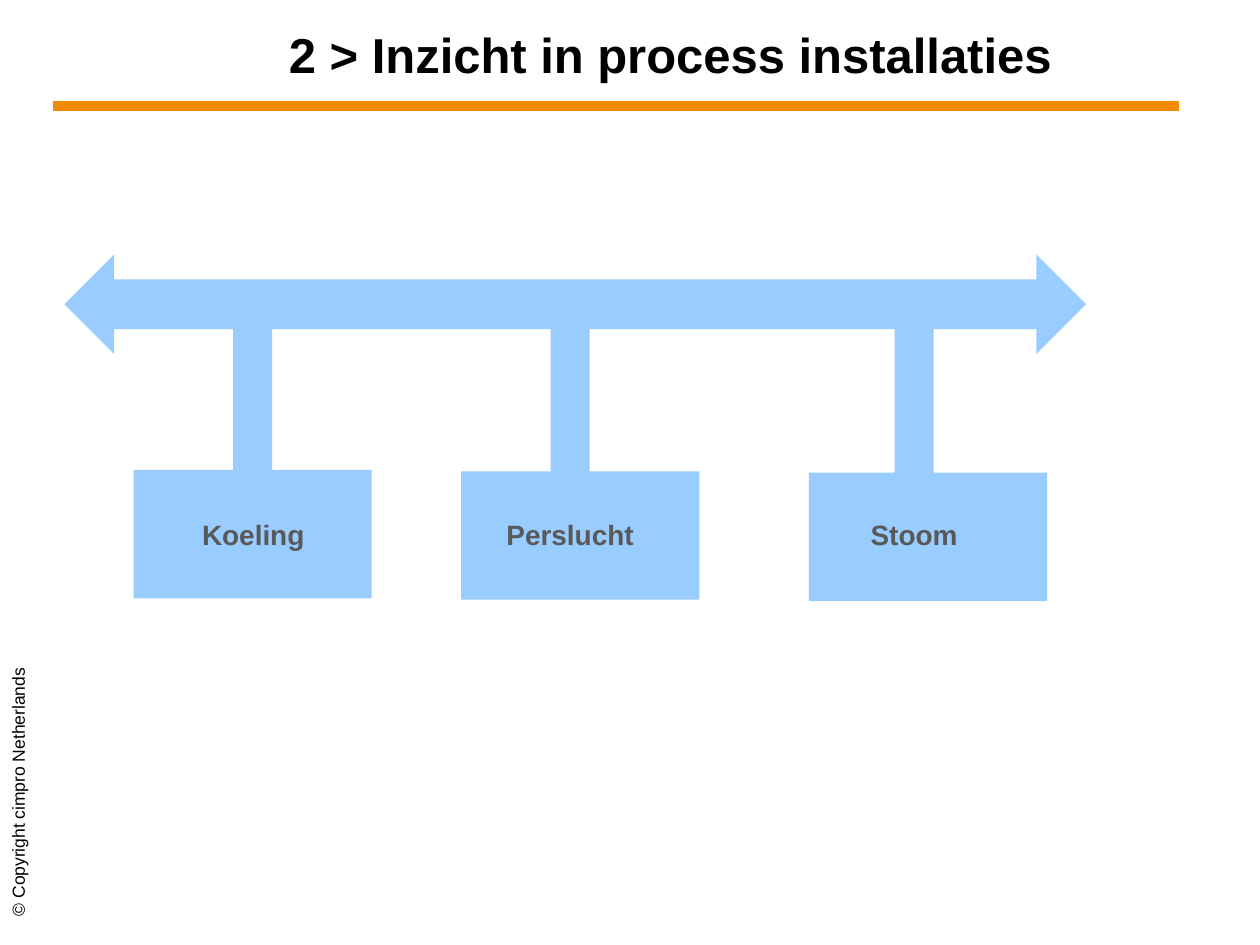
from lxml.etree import SubElement
from pptx import Presentation
from pptx.dml.color import RGBColor
from pptx.enum.shapes import MSO_CONNECTOR, MSO_SHAPE
from pptx.enum.text import MSO_ANCHOR, PP_ALIGN
from pptx.oxml.ns import qn
from pptx.util import Inches, Pt

TITLE = "2 > Inzicht in process installaties"
COPYRIGHT = "© Copyright cimpro Netherlands"
BLUE, ORANGE, GREY, BLACK = "99CCFF", "F28B00", "595959", "000000"

# name, box left, box top, pipe left, label left, label width
UTILITIES = [
    ("Koeling", 1.06, 3.73, 1.85, 1.3, 1.42),
    ("Perslucht", 3.66, 3.74, 4.37, 3.74, 1.57),
    ("Stoom", 6.42, 3.75, 7.1, 6.47, 1.57),
]


def rgb(value):
    return RGBColor.from_string(value)


def box(*lengths):
    return [Inches(v) for v in lengths]


def write(sp, text, size, color, bold=False, align=PP_ALIGN.CENTER, anchor=MSO_ANCHOR.TOP):
    tf = sp.text_frame
    tf.text = text
    tf.word_wrap = True
    tf.vertical_anchor = anchor
    p = tf.paragraphs[0]
    p.alignment = align
    font = p.runs[0].font
    font.name, font.size, font.bold = "Arial", Pt(size), bold
    font.color.rgb = rgb(color)


def add_blue(s, kind, *lengths):
    sp = s.shapes.add_shape(kind, *box(*lengths))
    sp.shadow.inherit = False
    sp.fill.solid()
    sp.fill.fore_color.rgb = rgb(BLUE)
    sp.line.fill.background()
    return sp


def add_label(s, text, lengths, size, color, **style):
    sp = s.shapes.add_textbox(*box(*lengths))
    write(sp, text, size, color, **style)
    return sp


def main():
    prs = Presentation()
    prs.slide_width, prs.slide_height = box(10, 7.5)
    s = prs.slides.add_slide(prs.slide_layouts[5])

    title = s.shapes.title
    title.left, title.top, title.width, title.height = box(1.93, 0.13, 6.78, 0.58)
    write(title, TITLE, 28, BLACK, bold=True, anchor=MSO_ANCHOR.BOTTOM)

    rule = s.shapes.add_connector(MSO_CONNECTOR.STRAIGHT, *box(0.42, 0.84, 9.36, 0.84))
    rule.line.color.rgb = rgb(ORANGE)
    rule.line.width = Pt(6)
    SubElement(rule._element.spPr, qn("a:effectLst"))

    footer = add_label(s, COPYRIGHT, (-1.16, 5.92, 2.62, 0.28), 10, BLACK, align=PP_ALIGN.LEFT)
    footer.rotation = 270

    for name, left, top, *rest in UTILITIES:
        add_blue(s, MSO_SHAPE.RECTANGLE, left, top, 1.89, 1.02)
    main_pipe = add_blue(s, MSO_SHAPE.UP_DOWN_ARROW, 4.17, -1.64, 0.79, 8.11)
    main_pipe.rotation = 90
    for name, left, top, pipe_left, label_left, label_width in UTILITIES:
        add_blue(s, MSO_SHAPE.RECTANGLE, pipe_left, 2.57, 0.31, 1.26)
        add_label(s, name, (label_left, 4.06, label_width, 0.37), 16, GREY, bold=True)

    prs.save("out.pptx")


if __name__ == "__main__":
    main()
